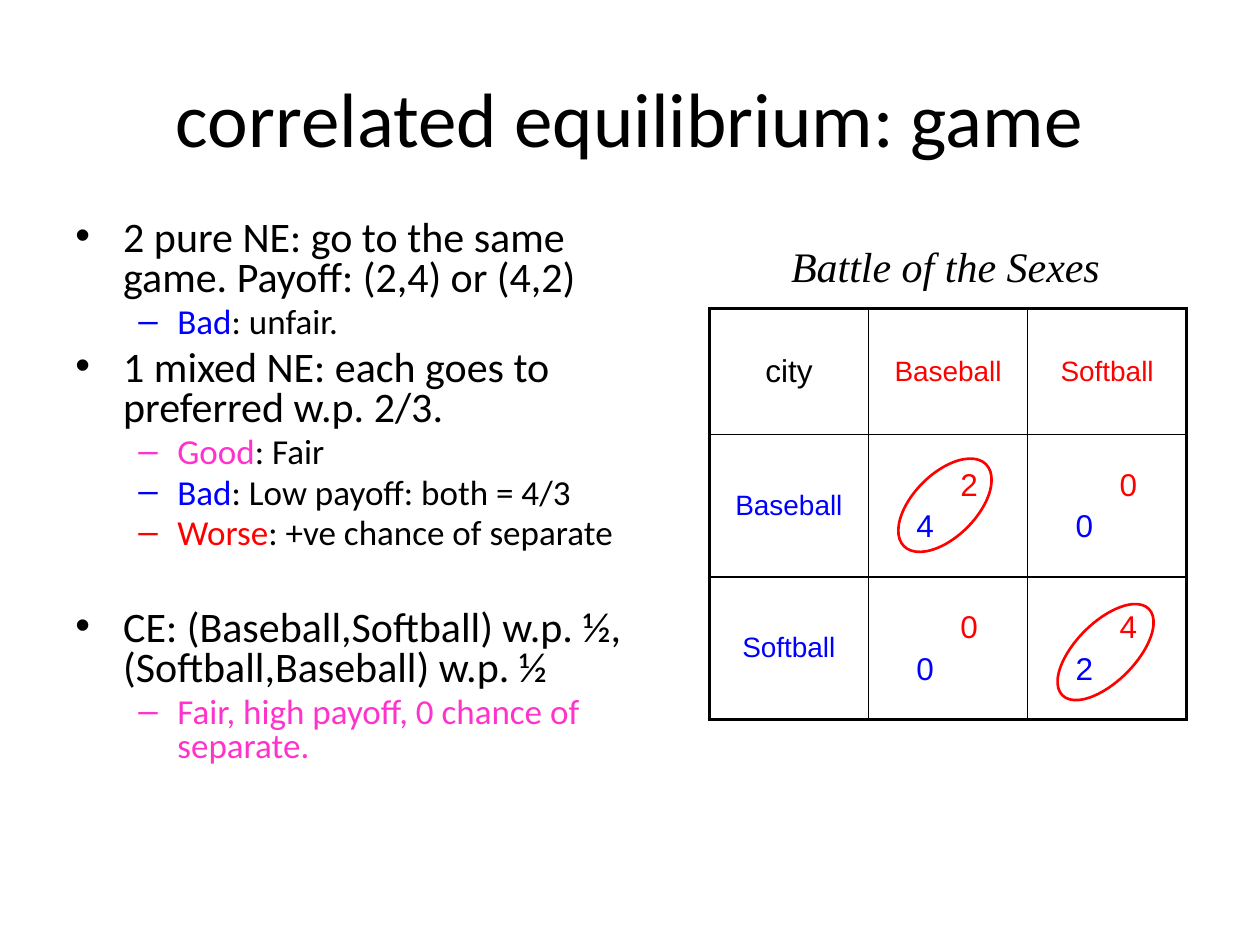
from pptx import Presentation
from pptx.dml.color import RGBColor
from pptx.enum.shapes import MSO_SHAPE
from pptx.enum.text import MSO_ANCHOR, PP_ALIGN
from pptx.oxml.ns import qn
from pptx.util import Inches, Pt
from lxml.etree import SubElement

COLORS = {"black": "000000", "red": "FF0000", "blue": "0000FF", "pink": "FF33CC"}

LEVELS = [
    {"size": 24, "left": 0.38, "hang": 0.38, "bullet": "•"},
    {"size": 20, "left": 0.81, "hang": 0.31, "bullet": "–"},
]

POINTS = [
    (0, [("2 pure NE: go to the same game. Payoff: (2,4) or (4,2)", "black")]),
    (1, [("Bad", "blue"), (": unfair.", "black")]),
    (0, [("1 mixed NE: each goes to preferred w.p. 2/3.", "black")]),
    (1, [("Good", "pink"), (": Fair", "black")]),
    (1, [("Bad", "blue"), (": Low payoff: both = 4/3", "black")]),
    (1, [("Worse", "red"), (": +ve chance of separate", "black")]),
    (0, [("CE: (Baseball,Softball) w.p. ½, (Softball,Baseball) w.p. ½", "black")]),
    (1, [("Fair, high payoff, 0 chance of separate.", "pink")]),
]
CONCLUSION = 6

GAMES = ["Baseball", "Softball"]
PAYOFFS = [[("2", "4"), ("0", "0")], [("0", "0"), ("4", "2")]]


def add_span(para, text, color, **format_values):
    span = para.add_run()
    span.text = text
    for name, value in format_values.items():
        setattr(span.font, name, value)
    span.font.color.rgb = RGBColor.from_string(COLORS[color])


def add_text_box(page, left, top, width, height, wrap=True):
    box = page.shapes.add_textbox(Inches(left), Inches(top), Inches(width), Inches(height))
    box.text_frame.word_wrap = wrap
    return box.text_frame


def next_para(frame, index):
    return frame.add_paragraph() if index else frame.paragraphs[0]


def indent(para, left, hang=0):
    properties = para._p.get_or_add_pPr()
    properties.set("marL", str(Inches(left)))
    properties.set("indent", str(-Inches(hang)))
    return properties


def add_title(page, left, top, width, height):
    frame = add_text_box(page, left, top, width, height)
    frame.vertical_anchor = MSO_ANCHOR.MIDDLE
    para = frame.paragraphs[0]
    para.alignment = PP_ALIGN.CENTER
    add_span(para, "correlated equilibrium: game", "black", name="Calibri", size=Pt(44))


def add_points(page, left, top, width, height):
    frame = add_text_box(page, left, top, width, height)
    for index, (depth, spans) in enumerate(POINTS):
        level = LEVELS[depth]
        para = next_para(frame, index)
        para.level = depth
        para.line_spacing = 0.8
        if index:
            para.space_before = Pt(33 if index == CONCLUSION else level["size"] * 0.2)
        properties = indent(para, level["left"], level["hang"])
        SubElement(properties, qn("a:buFont"), typeface="Arial")
        SubElement(properties, qn("a:buChar"), char=level["bullet"])
        for text, color in spans:
            add_span(para, text, color, name="Calibri", size=Pt(level["size"]))


def add_caption(page, left, top, width, height):
    frame = add_text_box(page, left, top, width, height, wrap=False)
    add_span(frame.paragraphs[0], "Battle of the Sexes", "black",
             name="Times New Roman", size=Pt(24), italic=True)


def set_borders(cell, row, column, last):
    outer = {"L": column == 0, "R": column == last, "T": row == 0, "B": row == last}
    properties = cell._tc.get_or_add_tcPr()
    for side, is_outer in outer.items():
        width = Pt(2.25 if is_outer else 1)
        line = SubElement(properties, qn(f"a:ln{side}"), w=str(width))
        fill = SubElement(line, qn("a:solidFill"))
        SubElement(fill, qn("a:srgbClr"), val=COLORS["black"])


def fill_label(cell, text, color, size):
    para = cell.text_frame.paragraphs[0]
    para.alignment = PP_ALIGN.CENTER
    add_span(para, text, color, name="Arial", size=Pt(size))


def fill_payoffs(cell, payoffs):
    styles = [("red", 0.63), ("blue", 0.28)]
    for index, (text, (color, left)) in enumerate(zip(payoffs, styles)):
        para = next_para(cell.text_frame, index)
        indent(para, left)
        if index:
            para.space_before = Pt(3.6)
        add_span(para, text, color, name="Arial", size=Pt(18))


def add_payoff_table(page, left, top, width, height):
    count = len(GAMES) + 1
    table = page.shapes.add_table(
        count, count, Inches(left), Inches(top), Inches(width), Inches(height)).table
    table.first_row = table.horz_banding = False
    header = 1
    step = (height - header) / len(GAMES)
    for row in range(count):
        table.rows[row].height = Inches(step if row else header)
        for column in range(count):
            cell = table.cell(row, column)
            cell.vertical_anchor = MSO_ANCHOR.MIDDLE
            set_borders(cell, row, column, count - 1)
            cell.fill.background()
            if row and column:
                fill_payoffs(cell, PAYOFFS[row - 1][column - 1])
            elif row:
                fill_label(cell, GAMES[row - 1], "blue", 16)
            elif column:
                fill_label(cell, GAMES[column - 1], "red", 16)
            else:
                fill_label(cell, "city", "black", 18)


def add_equilibrium_ring(page, left, top, width, height):
    ring = page.shapes.add_shape(
        MSO_SHAPE.OVAL, Inches(left), Inches(top), Inches(width), Inches(height))
    ring.rotation = 315
    ring.shadow.inherit = False
    ring.fill.background()
    ring.line.color.rgb = RGBColor.from_string(COLORS["red"])
    ring.line.width = Pt(1.5)


def main():
    deck = Presentation()
    deck.slide_width, deck.slide_height = Inches(10), Inches(7.5)
    page = deck.slides.add_slide(deck.slide_layouts[6])
    add_title(page, 0.5, 0.3, 9, 1.25)
    add_payoff_table(page, 5.63, 2.45, 3.79, 3.26)
    add_points(page, 0.5, 1.7, 4.9, 5)
    add_caption(page, 6.18, 1.86, 2.67, 0.5)
    add_equilibrium_ring(page, 8.29, 4.94, 0.97, 0.47)
    add_equilibrium_ring(page, 7.04, 3.76, 0.92, 0.5)
    deck.save("out.pptx")


if __name__ == "__main__":
    main()
